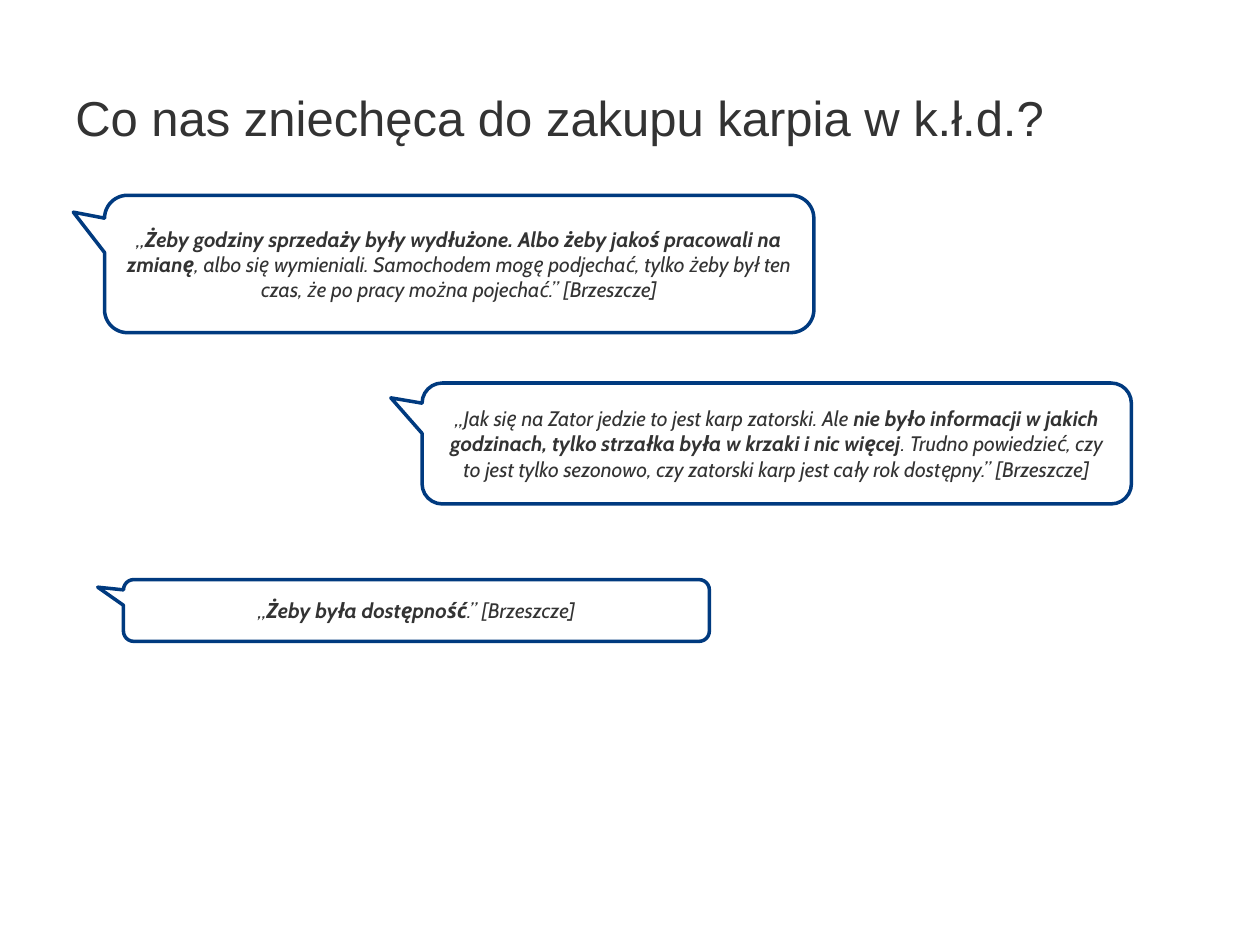
import pptx
import pptx.util
import pptx.dml.color
import pptx.enum.shapes
import pptx.enum.text

THEME = {
    "text": pptx.dml.color.RGBColor.from_string("333333"),
    "line": pptx.dml.color.RGBColor.from_string("003A7F"),
    "fill": pptx.dml.color.RGBColor.from_string("FFFFFF"),
    "title_font": "Arial", "title_size": 28,
    "quote_font": "Cabin", "quote_size": 12,
    "line_width": 2,
}

# The slide is a grid of 100 columns by 75 rows
COLS, ROWS = 100, 75
prs = pptx.Presentation()
prs.slide_width = pptx.util.Inches(10)
prs.slide_height = pptx.util.Inches(7.5)
s = prs.slides.add_slide(prs.slide_layouts[6])


def place(col, row, cols, rows):
    """Turn grid units into left, top, width and height."""
    w, h = prs.slide_width / COLS, prs.slide_height / ROWS
    return [round(v) for v in (col * w, row * h, cols * w, rows * h)]


def add_run(p, text, kind, bold=False, italic=False):
    r = p.add_run()
    r.text = text
    r.font.name = THEME[kind + "_font"]
    r.font.size = pptx.util.Pt(THEME[kind + "_size"])
    r.font.color.rgb = THEME["text"]
    r.font.bold = bold
    r.font.italic = italic


# Title
tf = s.shapes.add_textbox(*place(5, 3, 90, 12.5)).text_frame
tf.word_wrap = True
tf.vertical_anchor = pptx.enum.text.MSO_ANCHOR.MIDDLE
add_run(tf.paragraphs[0], "Co nas zniechęca do zakupu karpia w k.ł.d.?", "title")

# Quotes: grid place, then opening, stressed and closing words
quotes = [
    ((8.3, 15.5, 56.3, 10.9),
     "„",
     "Żeby godziny sprzedaży były wydłużone. Albo żeby jakoś pracowali na zmianę",
     ", albo się wymieniali. Samochodem mogę podjechać, tylko żeby był ten czas, "
     "że po pracy można pojechać.” [Brzeszcze]"),
    ((33.5, 30.4, 56.3, 9.6),
     "„Jak się na Zator jedzie to jest karp zatorski. Ale ",
     "nie było informacji w jakich godzinach, tylko strzałka była w krzaki i nic więcej",
     ". Trudno powiedzieć, czy to jest tylko sezonowo, czy zatorski karp jest "
     "cały rok dostępny.” [Brzeszcze]"),
    ((9.8, 46, 46.5, 4.9),
     "„", "Żeby była dostępność", ".” [Brzeszcze]"),
]

# Speech bubbles, each with its pointer at the upper left
for box, opening, stressed, closing in quotes:
    sp = s.shapes.add_shape(
        pptx.enum.shapes.MSO_SHAPE.ROUNDED_RECTANGULAR_CALLOUT, *place(*box))
    sp.shadow.inherit = False
    for i, value in enumerate((-0.544, -0.377, 0.167)):
        sp.adjustments[i] = value
    sp.fill.solid()
    sp.fill.fore_color.rgb = THEME["fill"]
    sp.line.color.rgb = THEME["line"]
    sp.line.width = pptx.util.Pt(THEME["line_width"])

    tf = sp.text_frame
    tf.word_wrap = True
    tf.vertical_anchor = pptx.enum.text.MSO_ANCHOR.MIDDLE
    p = tf.paragraphs[0]
    p.alignment = pptx.enum.text.PP_ALIGN.CENTER
    add_run(p, opening, "quote", italic=True)
    add_run(p, stressed, "quote", bold=True, italic=True)
    add_run(p, closing, "quote", italic=True)

prs.save("out.pptx")
